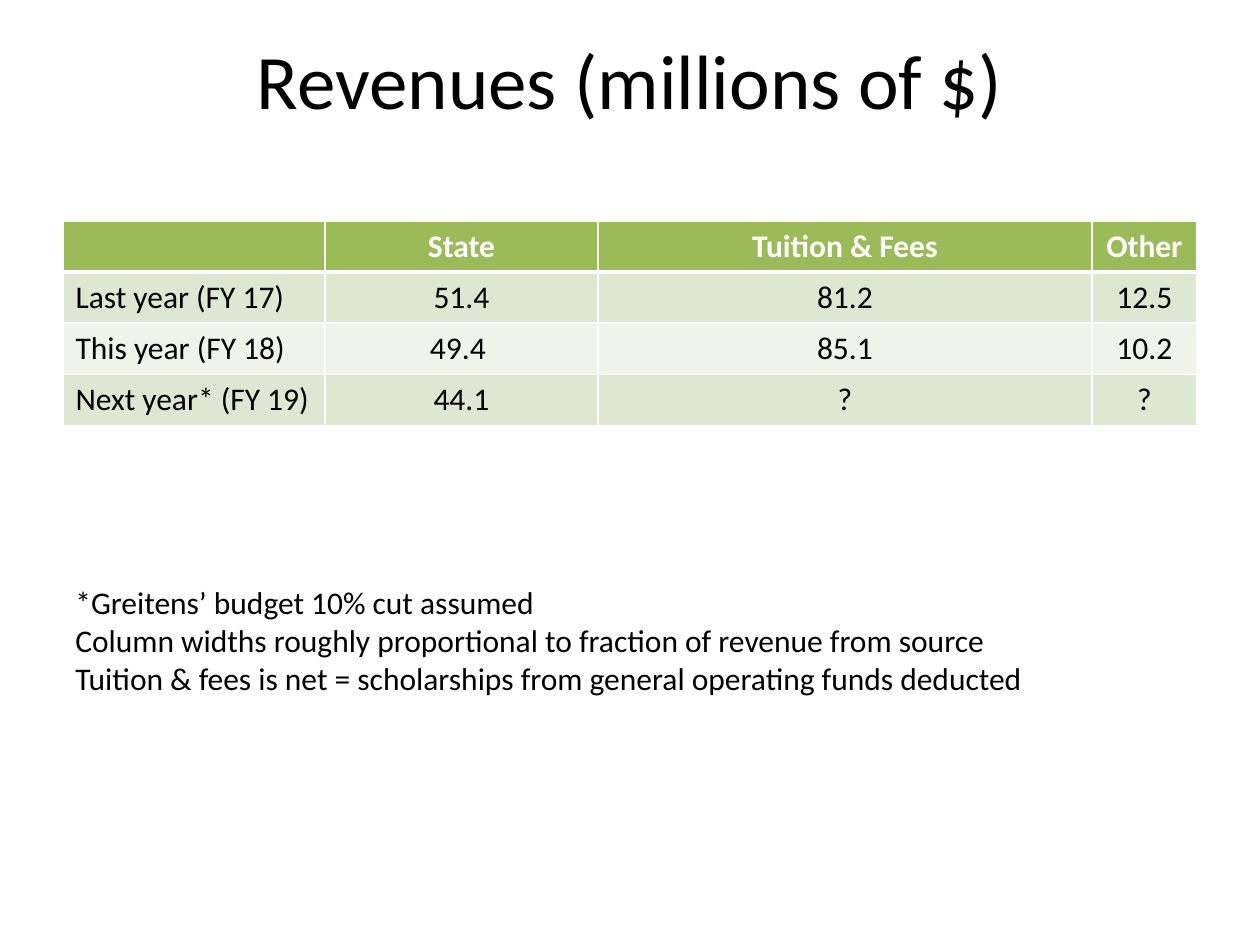
"""Build the revenues slide with its table and footnotes."""
from dataclasses import dataclass

from lxml import etree
from pptx import Presentation
from pptx.dml.color import RGBColor
from pptx.enum.text import MSO_ANCHOR, MSO_AUTO_SIZE, PP_ALIGN
from pptx.oxml.ns import qn
from pptx.util import Emu, Pt

LEFT, CENTER = PP_ALIGN.LEFT, PP_ALIGN.CENTER
TOP, MIDDLE = MSO_ANCHOR.TOP, MSO_ANCHOR.MIDDLE
NO_FIT, GROW = MSO_AUTO_SIZE.NONE, MSO_AUTO_SIZE.SHAPE_TO_FIT_TEXT
BLACK = RGBColor(0x00, 0x00, 0x00)
WHITE = RGBColor(0xFF, 0xFF, 0xFF)
GREEN = RGBColor(0x9B, 0xBB, 0x59)
BAND_DARK = RGBColor(0xDE, 0xE7, 0xD1)
BAND_LIGHT = RGBColor(0xEF, 0xF3, 0xEA)

EMU_PER_PX = 914400 / 126
BLANK_LAYOUT = 6
COLUMN_WIDTHS = (262, 273, 494, 105)
ROW_HEIGHT = 51
TABLE_LEFT, TABLE_TOP = 63, 221
ROWS = (
    ("", "State", "Tuition & Fees", "Other"),
    ("Last year (FY 17)", "51.4", "81.2", "12.5"),
    ("This year (FY 18)", "49.4 ", "85.1", "10.2"),
    ("Next year* (FY 19)", "44.1", "?", "?"),
)


@dataclass(frozen=True)
class TextBlock:
    """Text lines with their box in px and their format."""
    lines: tuple[str, ...]
    left: int
    top: int
    width: int
    height: int
    size: int
    alignment: PP_ALIGN
    anchor: MSO_ANCHOR
    auto_size: MSO_AUTO_SIZE


TEXT_BLOCKS = (
    TextBlock(("Revenues (millions of $)",), 63, 0, 1134, 158, 44, CENTER, MIDDLE, NO_FIT),
    TextBlock(
        (
            "*Greitens’ budget 10% cut assumed",
            "Column widths roughly proportional to fraction of revenue from source",
            "Tuition & fees is net = scholarships from general operating funds deducted",
        ),
        63, 577, 1134, 127, 18, LEFT, TOP, GROW,
    ),
)


def px(length: int) -> Emu:
    """Turn px into EMU."""
    return Emu(round(length * EMU_PER_PX))


def write_lines(text_frame, lines, size: int, alignment, color=BLACK, bold=False) -> None:
    """Write one formatted paragraph for each line."""
    font_format = {"name": "Calibri", "size": Pt(size), "bold": bold}
    for index, line in enumerate(lines):
        paragraph = text_frame.add_paragraph() if index else text_frame.paragraphs[0]
        paragraph.alignment = alignment
        run = paragraph.add_run()
        run.text = line
        for name, value in font_format.items():
            setattr(run.font, name, value)
        run.font.color.rgb = color


def draw_text(slide, block: TextBlock) -> None:
    """Draw a text block as a wrapping text box."""
    box = slide.shapes.add_textbox(
        px(block.left), px(block.top), px(block.width), px(block.height)
    )
    frame_format = {
        "word_wrap": True,
        "auto_size": block.auto_size,
        "vertical_anchor": block.anchor,
    }
    for name, value in frame_format.items():
        setattr(box.text_frame, name, value)
    write_lines(box.text_frame, block.lines, block.size, block.alignment)


def add_borders(cell, widths: dict[str, int]) -> None:
    """Add white borders, with a width in points for each side."""
    properties = cell._tc.get_or_add_tcPr()
    for side, width in widths.items():
        line = etree.SubElement(properties, qn(f"a:ln{side}"), w=str(Pt(width)))
        fill = etree.SubElement(line, qn("a:solidFill"))
        etree.SubElement(fill, qn("a:srgbClr"), val=str(WHITE))


def draw_table(slide) -> None:
    """Draw the revenue table with a green header and banded rows."""
    table = slide.shapes.add_table(
        len(ROWS), len(COLUMN_WIDTHS), px(TABLE_LEFT), px(TABLE_TOP),
        px(sum(COLUMN_WIDTHS)), px(ROW_HEIGHT * len(ROWS)),
    ).table
    for column, width in zip(table.columns, COLUMN_WIDTHS):
        column.width = px(width)
    for row_index, texts in enumerate(ROWS):
        is_header = row_index == 0
        table.rows[row_index].height = px(ROW_HEIGHT)
        band = BAND_DARK if row_index % 2 else BAND_LIGHT
        borders = {"L": 1, "R": 1, "T": 1, "B": 3} if is_header else {"L": 1, "R": 1, "B": 1}
        for column_index, text in enumerate(texts):
            cell = table.cell(row_index, column_index)
            add_borders(cell, borders)
            cell.fill.solid()
            cell.fill.fore_color.rgb = GREEN if is_header else band
            if text:
                write_lines(
                    cell.text_frame, (text,), 18, CENTER if column_index else LEFT,
                    WHITE if is_header else BLACK, is_header,
                )


def main() -> None:
    """Build and save the presentation."""
    presentation = Presentation()
    presentation.slide_width, presentation.slide_height = px(1260), px(945)
    slide = presentation.slides.add_slide(presentation.slide_layouts[BLANK_LAYOUT])
    title, notes = TEXT_BLOCKS
    draw_text(slide, title)
    draw_table(slide)
    draw_text(slide, notes)
    presentation.save("out.pptx")


if __name__ == "__main__":
    main()
